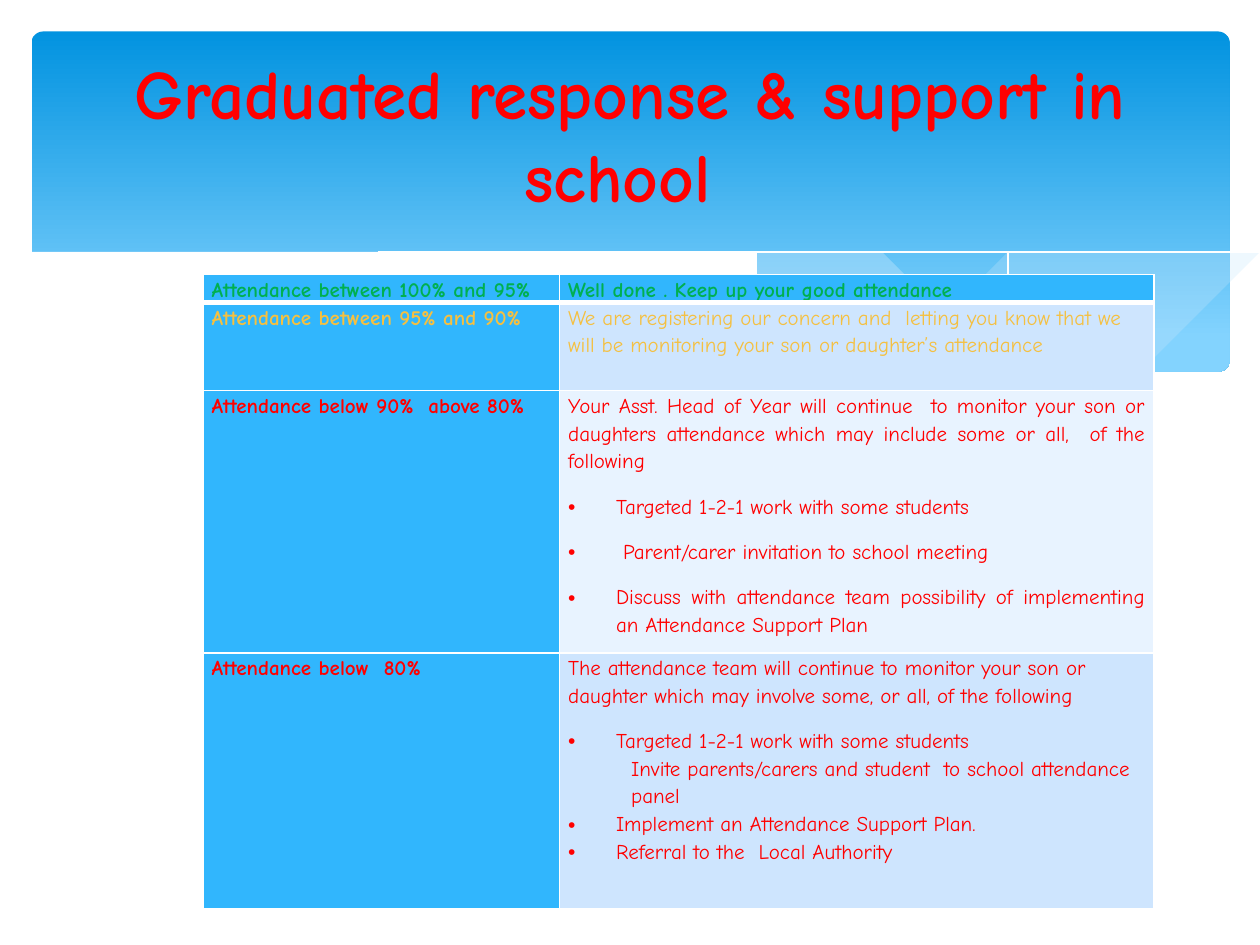
from dataclasses import dataclass

from lxml import etree
from pptx import Presentation
from pptx.dml.color import RGBColor
from pptx.enum.shapes import MSO_SHAPE
from pptx.enum.text import MSO_ANCHOR, PP_ALIGN
from pptx.oxml.ns import qn
from pptx.util import Emu, Inches, Pt


@dataclass(frozen=True)
class Theme:
    font: str = "Comic Neue"
    title_size: float = 39.6
    body_size: float = 12
    white: str = "FFFFFF"
    sky_top: str = "0293E0"
    sky_bottom: str = "83D3FE"
    wave: str = "C6E7FC"
    label: str = "31B6FD"
    band_dark: str = "CEE5FE"
    band_light: str = "E8F3FF"
    green: str = "00B050"
    amber: str = "F5C040"
    red: str = "FF0000"


T = Theme()


def rgb(color):
    return RGBColor.from_string(color)


def write(p, text, size=T.body_size, color=T.red, bold=False, align=None,
          spacing=None, after=0, indent=0, bullet=False):
    """Put one formatted run in a paragraph; indent is in inches."""
    r = p.add_run()
    r.text = text
    r.font.name, r.font.size, r.font.bold = T.font, Pt(size), bold
    r.font.color.rgb = rgb(color)
    p.alignment = align
    p.line_spacing = spacing
    p.space_after = Pt(after)
    pPr = p._p.get_or_add_pPr()
    if indent:
        pPr.set("marL", str(Inches(indent)))
        pPr.set("indent", str(-Inches(indent) if bullet else 0))
    if bullet:
        etree.SubElement(pPr, qn("a:buFont"), typeface="Arial")
        etree.SubElement(pPr, qn("a:buChar"), char="•")


def spline(points, steps=6):
    """Smooth curve through the points (Catmull-Rom)."""
    ends = [points[0], *points, points[-1]]
    curve = [points[0]]
    for a, b, c, d in zip(ends, ends[1:], ends[2:], ends[3:]):
        for i in range(1, steps + 1):
            t = i / steps
            curve.append(tuple(
                0.5 * (2 * q + (s - o) * t + (2 * o - 5 * q + 4 * s - u) * t ** 2
                       + (3 * q - o - 3 * s + u) * t ** 3)
                for o, q, s, u in zip(a, b, c, d)))
    return curve


class SlideBuilder:
    def __init__(self, prs, theme):
        self.s = prs.slides.add_slide(prs.slide_layouts[6])
        self.theme = theme

    def sky(self, x, y, w, h):
        sp = self.s.shapes.add_shape(MSO_SHAPE.ROUNDED_RECTANGLE, Inches(x), Inches(y),
                                     Inches(w), Inches(h))
        sp.adjustments[0] = 0.034
        sp.shadow.inherit = False
        sp.line.fill.background()
        sp.fill.gradient()
        sp.fill.gradient_angle = 270
        stops = sp.fill.gradient_stops
        for stop, position, color in zip(stops, (0, 0.9),
                                         (self.theme.sky_top, self.theme.sky_bottom)):
            stop.position = position
            stop.color.rgb = rgb(color)

    def outline(self, points, closed):
        builder = self.s.shapes.build_freeform(*points[0], scale=Inches(1))
        builder.add_line_segments(points[1:], close=closed)
        sp = builder.convert_to_shape()
        sp.shadow.inherit = False
        return sp

    def wave(self, points, color, opacity=100):
        sp = self.outline(points, True)
        sp.line.fill.background()
        sp.fill.solid()
        sp.fill.fore_color.rgb = rgb(color)
        if opacity < 100:
            clr = sp._element.spPr.find(qn("a:solidFill"))[0]
            etree.SubElement(clr, qn("a:alpha"), val=str(opacity * 1000))

    def curve(self, points):
        sp = self.outline(spline(points), False)
        sp.fill.background()
        sp.line.color.rgb = rgb(self.theme.white)
        sp.line.width = Emu(0)

    def title(self, text, x, y, w, h):
        tf = self.s.shapes.add_textbox(Inches(x), Inches(y), Inches(w), Inches(h)).text_frame
        tf.word_wrap = True
        tf.vertical_anchor = MSO_ANCHOR.MIDDLE
        write(tf.paragraphs[0], text, size=self.theme.title_size, bold=True,
              align=PP_ALIGN.CENTER)

    def borders(self, cell, **widths):
        tcPr = cell._tc.get_or_add_tcPr()
        for side in "LRTB":
            ln = etree.SubElement(tcPr, qn(f"a:ln{side}"), w=str(Pt(widths.get(side, 1))))
            fill = etree.SubElement(ln, qn("a:solidFill"))
            etree.SubElement(fill, qn("a:srgbClr"), val=self.theme.white)

    def cell(self, cell, fill, paragraphs, **widths):
        cell.margin_left = cell.margin_right = Inches(0.07)
        cell.margin_top = cell.margin_bottom = 0
        self.borders(cell, **widths)
        cell.fill.solid()
        cell.fill.fore_color.rgb = rgb(fill)
        tf = cell.text_frame
        for i, (text, style) in enumerate(paragraphs):
            p = tf.add_paragraph() if i else tf.paragraphs[0]
            write(p, text, **{"spacing": 1.15, "after": 10, **style})

    def table(self, x, y, widths, heights, rows):
        table = self.s.shapes.add_table(len(rows), len(widths), Inches(x), Inches(y),
                                        Inches(sum(widths)), Inches(sum(heights))).table
        for column, w in zip(table.columns, widths):
            column.width = Inches(w)
        for i, (h, (label, color, fill, response)) in enumerate(zip(heights, rows)):
            table.rows[i].height = Inches(h)
            edges = {0: {"B": 3}, 1: {"T": 3}}.get(i, {})
            self.cell(table.cell(i, 0), self.theme.label,
                      [(label, {"color": color, "bold": True})], **edges)
            self.cell(table.cell(i, 1), fill,
                      [(text, {"color": color, **style}) for text, style in response], **edges)


RIGHT_WAVE = [(9.76, 2), (9.35, 2.07), (8.61, 2.23), (7.79, 2.42), (6.61, 2.65), (7.19, 2.72),
              (7.69, 2.77), (8.14, 2.78), (8.63, 2.75), (9.05, 2.69), (9.42, 2.59), (9.76, 2.47)]
MIDDLE_WAVE = [(8.93, 2.73), (8.07, 2.6), (7.06, 2.4), (6.29, 2.22), (5.69, 2.08), (5.14, 1.98),
               (4.65, 1.91), (4.2, 1.87), (3.61, 1.85), (2.86, 1.91), (3.62, 2.03), (4.49, 2.22),
               (5.3, 2.4), (6.01, 2.55), (6.65, 2.66), (7.22, 2.74), (7.85, 2.78), (8.38, 2.78),
               (8.93, 2.73)]
LONG_CURVE = [(3.09, 1.95), (3.53, 1.89), (4.16, 1.87), (4.89, 1.9), (5.56, 1.97), (6.36, 2.08),
              (7.27, 2.26), (8.31, 2.51), (9.07, 2.72)]
RISING_CURVE = [(6.13, 2.57), (6.95, 2.35), (7.76, 2.16), (8.66, 1.99), (9.24, 1.9), (9.75, 1.85)]
PAPER_EDGE = [(9.77, 2.46), (9.3, 2.62), (8.75, 2.73), (8.09, 2.77), (7.44, 2.74), (6.68, 2.65),
              (5.79, 2.5), (5.03, 2.33), (4.18, 2.13), (3.4, 1.97), (2.71, 1.88), (2.11, 1.84),
              (1.61, 1.84), (1.19, 1.87), (0.76, 1.95), (0.46, 2.03), (0.23, 2.13)]

BULLET = {"indent": 0.38, "bullet": True}
TIGHT = {**BULLET, "after": 0}
JUSTIFIED = {"align": PP_ALIGN.JUSTIFY}
ROWS = [
    ("Attendance between 100% and 95%", T.green, T.label,
     [("Well done . Keep up your good attendance", {"bold": True})]),
    ("Attendance between 95% and 90%", T.amber, T.band_dark,
     [("We are registering our concern and  letting you know that we will be monitoring "
       "your son or daughter’s attendance", {})]),
    ("Attendance below 90%  above 80%", T.red, T.band_light,
     [("Your Asst. Head of Year will continue  to monitor your son or daughters attendance "
       "which may include some or all,  of the following", JUSTIFIED),
      ("Targeted 1-2-1 work with some students", {**BULLET, **JUSTIFIED}),
      (" Parent/carer invitation to school meeting", {**BULLET, **JUSTIFIED}),
      ("Discuss with attendance team possibility of implementing an Attendance Support Plan",
       {**BULLET, **JUSTIFIED})]),
    ("Attendance below  80%", T.red, T.band_dark,
     [("The attendance team will continue to monitor your son or daughter which may involve "
       "some, or all, of the following", {}),
      ("Targeted 1-2-1 work with some students", TIGHT),
      ("Invite parents/carers and student  to school attendance panel",
       {"indent": 0.5, "after": 0}),
      ("Implement an Attendance Support Plan.", TIGHT),
      ("Referral to the  Local Authority", BULLET)]),
]


def main():
    prs = Presentation()
    prs.slide_width, prs.slide_height = Inches(10), Inches(7.5)
    b = SlideBuilder(prs, T)
    b.sky(0.25, 0.25, 9.51, 2.7)
    b.wave(RIGHT_WAVE, T.wave, 29)
    b.wave(spline(MIDDLE_WAVE), T.wave, 40)
    b.curve(LONG_CURVE)
    b.curve(RISING_CURVE)
    b.wave(spline(PAPER_EDGE) + [(0.23, 3.29), (9.77, 3.29)], T.white)
    b.table(1.61, 2.18, [2.83, 4.72], [0.22, 0.7, 2.08, 2.03], ROWS)
    b.title("Graduated response & support in school ", 0.5, 0.37, 9, 1.37)
    prs.save("out.pptx")


if __name__ == "__main__":
    main()
